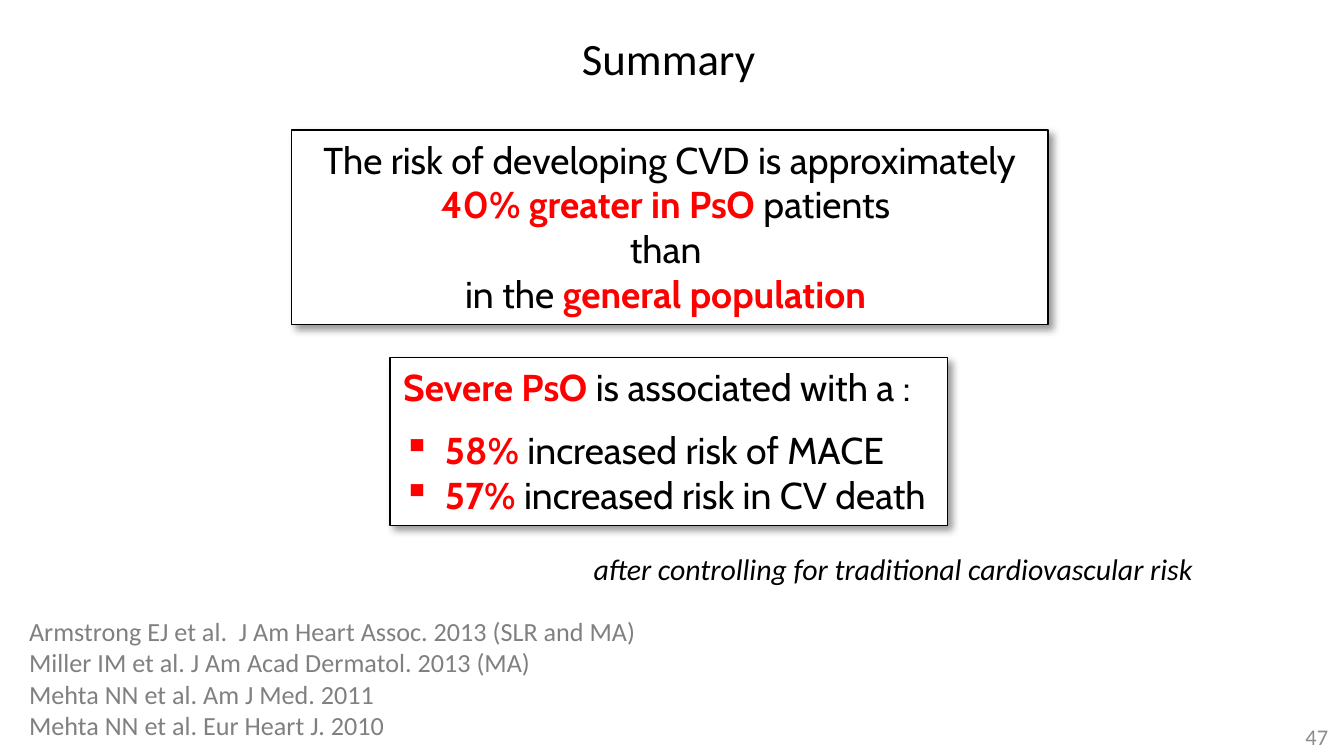
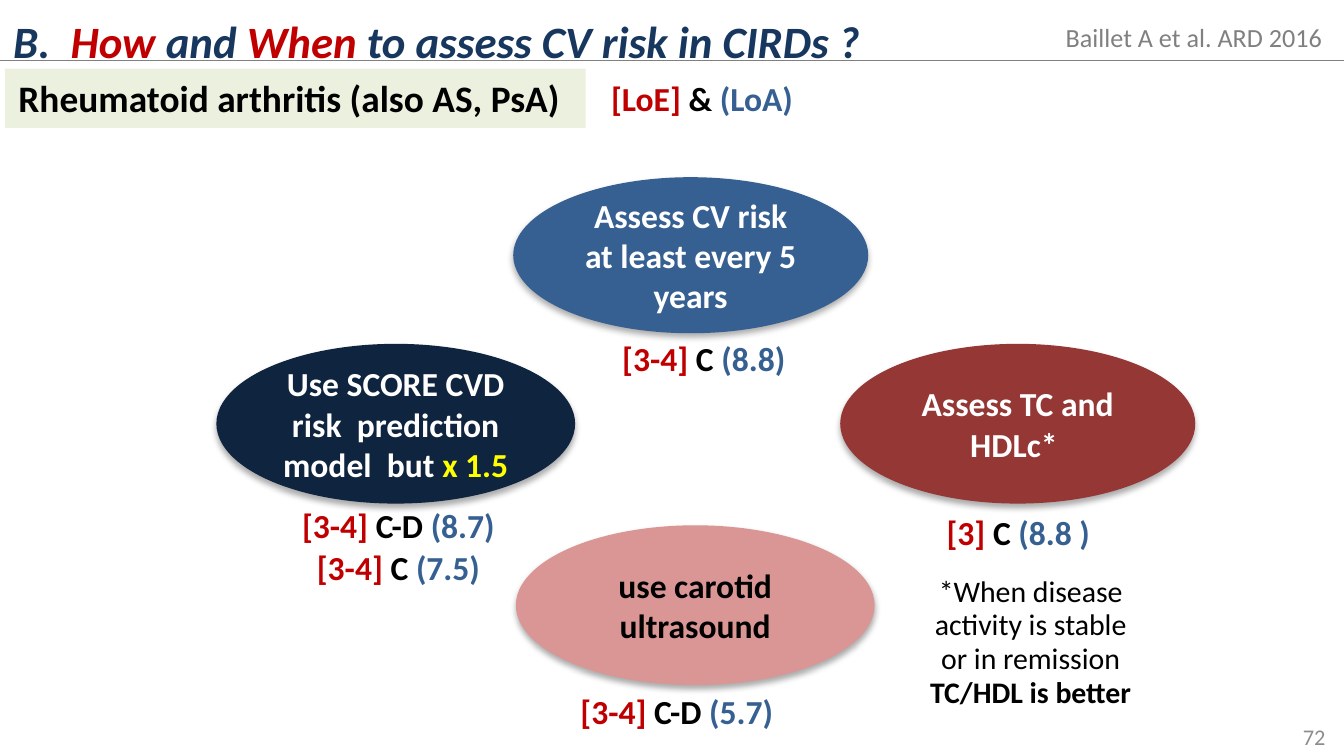
from pptx import Presentation
from pptx.dml.color import RGBColor
from pptx.enum.shapes import MSO_CONNECTOR, MSO_SHAPE
from pptx.enum.text import MSO_ANCHOR, PP_ALIGN
from pptx.oxml import parse_xml
from pptx.oxml.ns import nsdecls
from pptx.util import Cm, Pt

BLACK, WHITE, GRAY, PALE_GRAY = "000000", "FFFFFF", "808080", "8C8C8C"
RED, DARK_RED, BLUE, NAVY = "FF0000", "C00000", "376092", "17375E"
CARD_SHADOW = (40, 4, 3, 45)
OVAL_SHADOW = (32, 3.5, 2.2, 90)
LEFT, CENTER, RIGHT = PP_ALIGN.LEFT, PP_ALIGN.CENTER, PP_ALIGN.RIGHT


def color(value):
    return RGBColor.from_string(value)


def add_box(page, at, paragraphs, size, shape=None, fill=None, outline=None, shadow=None,
            align=LEFT, anchor=MSO_ANCHOR.TOP, wrap=True, spacing=None, **style):
    place = [Cm(length) for length in at]
    if shape is None:
        box = page.shapes.add_textbox(*place)
    else:
        box = page.shapes.add_shape(shape, *place)
        box.shadow.inherit = False
        box.fill.solid()
        box.fill.fore_color.rgb = color(fill)
        if outline:
            box.line.color.rgb = color(outline)
            box.line.width = Pt(0.75)
        else:
            box.line.fill.background()
    if shadow:
        alpha, blur, distance, angle = shadow
        box._element.spPr.find("{*}effectLst").append(parse_xml(
            f'<a:outerShdw {nsdecls("a")} blurRad="{Pt(blur)}" dist="{Pt(distance)}" '
            f'dir="{angle * 60000}" algn="ctr" rotWithShape="0"><a:srgbClr val="{BLACK}">'
            f'<a:alpha val="{alpha * 1000}"/></a:srgbClr></a:outerShdw>'))
    frame = box.text_frame
    frame.word_wrap = wrap
    frame.vertical_anchor = anchor
    for index, spans in enumerate(paragraphs):
        para = frame.paragraphs[0] if index == 0 else frame.add_paragraph()
        para.alignment = align
        if spacing:
            para.line_spacing = spacing
        for text, ink, *changes in spans:
            span = para.add_run()
            span.text = text
            span.font.color.rgb = color(ink)
            values = {"name": "Calibri", "size": Pt(size), **style}
            for change in changes:
                values.update(change)
            for name, value in values.items():
                setattr(span.font, name, value)
    return box


deck = Presentation()
deck.slide_width, deck.slide_height = Cm(25.4), Cm(14.29)
summary, assessment = [deck.slides.add_slide(deck.slide_layouts[6]) for _ in range(2)]

for page, number, left in [(summary, "47", 19.43), (assessment, "72", 19.38)]:
    add_box(page, (left, 13.54, 5.92, 0.76), [[(number, PALE_GRAY)]], 12,
            align=RIGHT, anchor=MSO_ANCHOR.MIDDLE)

references = [
    "Armstrong EJ et al.  J Am Heart Assoc. 2013 (SLR and MA)",
    "Miller IM et al. J Am Acad Dermatol. 2013 (MA)",
    "Mehta NN et al. Am J Med. 2011",
    "Mehta NN et al. Eur Heart J. 2010",
]
add_box(summary, (0.3, 11.51, 12.19, 2.64), [[(line, GRAY)] for line in references], 14)

card = {"shape": MSO_SHAPE.RECTANGLE, "fill": WHITE, "outline": BLACK,
        "shadow": CARD_SHADOW, "name": "Cabin"}
bold = {"bold": True}
severe_card = add_box(summary, (7.37, 6.76, 10.54, 3.18), [
    [("Severe PsO ", RED, bold), ("is associated with a :", BLACK)],
    [("58%", RED, bold), (" increased risk of MACE", BLACK)],
    [("57% ", RED, bold), ("increased risk in CV death", BLACK)],
], 20, **card)
bullets = severe_card.text_frame.paragraphs[1:]
bullets[0].space_before = Pt(9.6)
for para in bullets:
    properties = para._p.get_or_add_pPr()
    properties.set("marL", str(Cm(0.79)))
    properties.set("indent", str(-Cm(0.79)))
    for element in [f'<a:buClr {nsdecls("a")}><a:srgbClr val="{RED}"/></a:buClr>',
                    f'<a:buChar {nsdecls("a")} char="▪"/>']:
        properties.append(parse_xml(element))

add_box(summary, (5.51, 2.46, 14.3, 3.68), [
    [("The risk of developing CVD is approximately ", BLACK),
     ("40% greater in PsO ", RED, bold), ("patients ", BLACK)],
    [("than ", BLACK)],
    [("in the ", BLACK), ("general population ", RED, bold)],
], 20, align=CENTER, **card)
add_box(summary, (10.97, 10.29, 12.12, 0.94),
        [[("after controlling for traditional cardiovascular risk", BLACK)]], 16, italic=True)
add_box(summary, (9.5, 0.46, 6.27, 1.27), [[("Summary", BLACK)]], 24, align=CENTER)

add_box(assessment, (0.1, 1.3, 10.97, 1.12),
        [[("Rheumatoid arthritis (also AS, PsA)", BLACK)]], 20,
        shape=MSO_SHAPE.RECTANGLE, fill="EBF1DE", bold=True)

ovals = [
    ((9.7, 3.35, 6.71, 2.95), BLUE, [("Assess CV risk at least every 5 years", WHITE)]),
    ((4.09, 6.5, 6.78, 3.02), "0F243E",
     [("Use SCORE CVD risk  prediction model  but ", WHITE), ("x 1.5", "FFFF00")]),
    ((15.88, 6.5, 6.71, 3.02), "953735", [("Assess TC and HDLc* ", WHITE)]),
    ((9.75, 9.93, 6.78, 3.02), "D99694", [("use carotid ultrasound", BLACK)]),
]
for at, fill, spans in ovals:
    add_box(assessment, at, [spans], 18, shape=MSO_SHAPE.OVAL, fill=fill,
            shadow=OVAL_SHADOW, align=CENTER, anchor=MSO_ANCHOR.MIDDLE, bold=True)

ratings = [
    (11.3, 1.35, 4.01, LEFT, "[LoE]", " & ", "(LoA)"),
    (11.51, 6.27, 3.63, LEFT, "[3-4] ", "C ", "(8.8)"),
    (5.36, 9.42, 4.34, CENTER, "[3-4] ", "C-D ", "(8.7)"),
    (5.36, 10.21, 4.34, CENTER, "[3-4] ", "C ", "(7.5)"),
    (17.63, 9.55, 3.23, CENTER, "[3] ", "C ", "(8.8 )"),
    (10.72, 12.93, 4.24, LEFT, "[3-4] ", "C-D ", "(5.7)"),
]
for left, top, width, align, *texts in ratings:
    add_box(assessment, (left, top, width, 1.02), [zip(texts, (DARK_RED, BLACK, BLUE))], 18,
            align=align, wrap=align == CENTER, bold=True)

add_box(assessment, (17.17, 10.74, 4.62, 2.82), [
    [("*When disease activity is stable or in remission", BLACK)],
    [("TC/HDL is better", BLACK, bold)],
], 16, align=CENTER, spacing=Pt(18))

add_box(assessment, (0, -0.38, 16.66, 1.8), [[
    ("B.  ", NAVY), ("How ", DARK_RED), ("and ", NAVY), ("When ", DARK_RED),
    ("to assess CV risk in CIRDs ?", NAVY),
]], 24, anchor=MSO_ANCHOR.MIDDLE, wrap=False, spacing=1.5, bold=True, italic=True)

rule = assessment.shapes.add_connector(MSO_CONNECTOR.STRAIGHT, Cm(0), Cm(1.14), Cm(25.4), Cm(1.14))
rule.line.color.rgb = color(GRAY)
rule.line.width = Pt(0.75)
rule._element.spPr.append(parse_xml(f'<a:effectLst {nsdecls("a")}/>'))

add_box(assessment, (19.89, 0.28, 5.41, 0.86), [[("Baillet A et al. ARD 2016", GRAY)]], 14,
        wrap=False)

deck.save("out.pptx")
